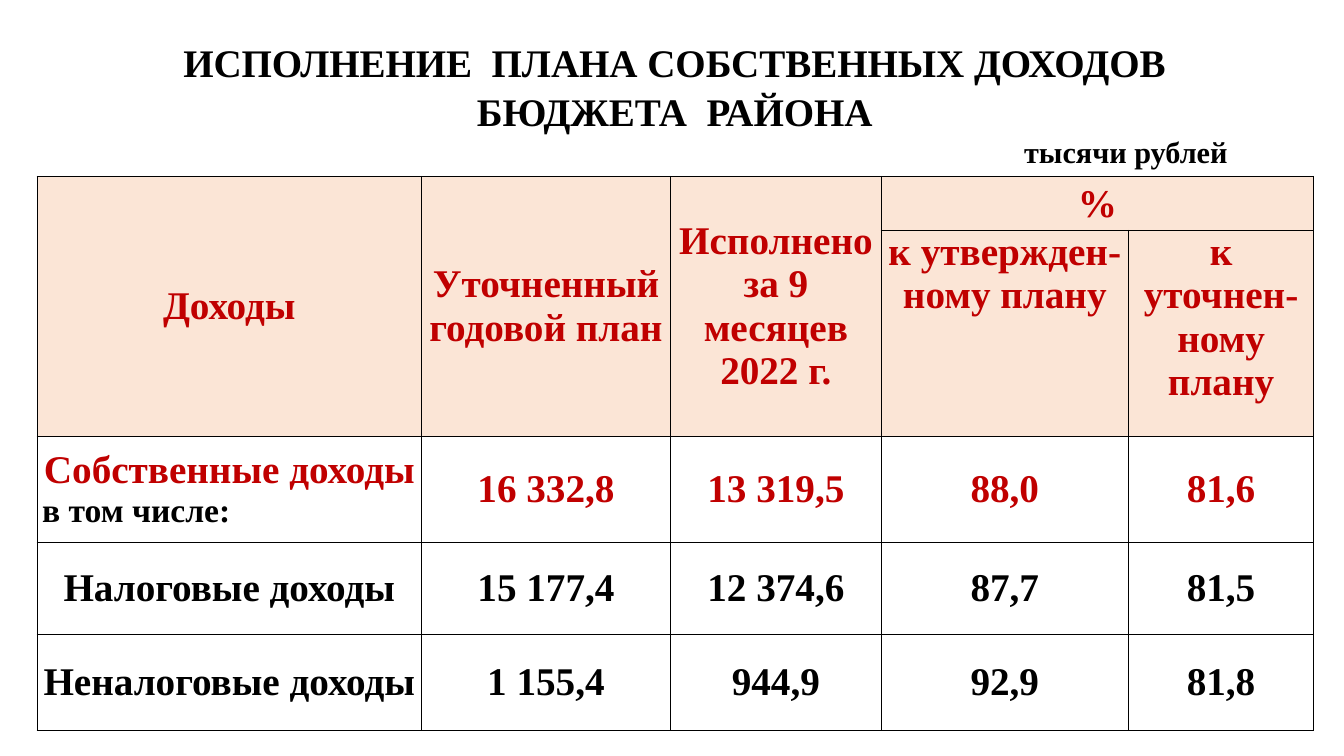
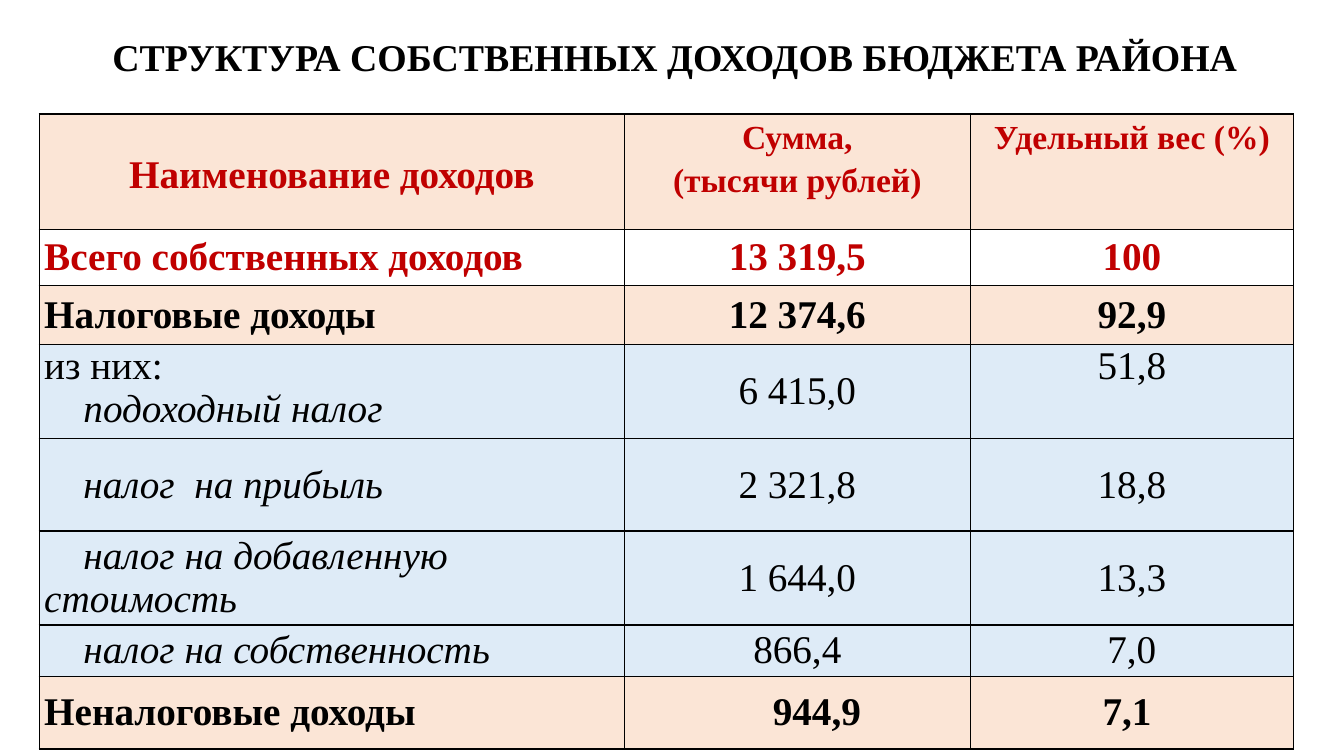
from dataclasses import dataclass, replace

from lxml import etree
from pptx import Presentation
from pptx.dml.color import RGBColor
from pptx.enum.text import MSO_ANCHOR, PP_ALIGN
from pptx.oxml.ns import qn
from pptx.util import Pt

LEFT, CENTER, RIGHT = PP_ALIGN.LEFT, PP_ALIGN.CENTER, PP_ALIGN.RIGHT
TOP, MIDDLE = MSO_ANCHOR.TOP, MSO_ANCHOR.MIDDLE


@dataclass(frozen=True)
class Theme:
    font: str = "Times New Roman"
    black: str = "000000"
    red: str = "C00000"
    white: str = "FFFFFF"
    peach: str = "FBE5D6"
    blue: str = "DEEBF7"
    title: float = 27.9
    title_single: float = 27
    units: float = 21.6
    body: float = 28
    small: float = 24
    indent: float = 28
    inset: float = 3.6
    border: float = 1


T = Theme()


@dataclass(frozen=True)
class Style:
    size: float = T.body
    color: str = T.black
    bold: bool = True
    italic: bool = False
    align: int = CENTER
    spacing: float = 1.0
    first: float = 0
    margin: float = 0


@dataclass(frozen=True)
class Cell:
    lines: tuple
    fill: str = T.white
    anchor: int = MIDDLE


HEAD = Style(color=T.red)
HEAD_WIDE = replace(HEAD, spacing=1.15)
HEAD_SMALL = replace(HEAD_WIDE, size=T.small)
TOTAL = HEAD
STRONG = Style()
PLAIN = Style(bold=False)
ITEM = replace(PLAIN, italic=True, align=LEFT, first=T.indent)


def cell(text, style, fill=T.white, anchor=MIDDLE):
    return Cell(tuple((t, style) for t in text.split("\n")), fill, anchor)


def row(style, fill, label, *values):
    return [cell(label, replace(style, align=LEFT), fill)] + [
        cell(v, style, fill) for v in values]


def item_row(label, *values):
    return [cell(label, ITEM, T.blue)] + [cell(v, PLAIN, T.blue) for v in values]


def write(tf, lines):
    for i, (text, style) in enumerate(lines):
        p = tf.paragraphs[0] if i == 0 else tf.add_paragraph()
        p.add_run().text = text
        p.alignment = style.align
        p.line_spacing = style.spacing
        f = p.font
        f.name, f.size = T.font, Pt(style.size)
        f.bold, f.italic = style.bold, style.italic
        f.color.rgb = RGBColor.from_string(style.color)
        if style.first or style.margin:
            pPr = p._p.get_or_add_pPr()
            pPr.set("marL", str(Pt(style.margin)))
            pPr.set("indent", str(Pt(style.first)))


def add_text(s, box, text, style):
    tf = s.shapes.add_textbox(*map(Pt, box)).text_frame
    tf.word_wrap = True
    tf.vertical_anchor = MIDDLE
    write(tf, [(text, style)])


def add_borders(c):
    tcPr = c._tc.get_or_add_tcPr()
    for i, side in enumerate(("a:lnL", "a:lnR", "a:lnT", "a:lnB")):
        ln = etree.Element(qn(side), w=str(Pt(T.border)))
        fill = etree.SubElement(ln, qn("a:solidFill"))
        etree.SubElement(fill, qn("a:srgbClr"), val=T.black)
        tcPr.insert(i, ln)


def add_grid(s, left, top, widths, heights, rows, merges=()):
    box = (left, top, sum(widths), sum(heights))
    table = s.shapes.add_table(len(heights), len(widths), *map(Pt, box)).table
    table.first_row = table.horz_banding = False
    for column, width in zip(table.columns, widths):
        column.width = Pt(width)
    for r, (table_row, height, cells) in enumerate(zip(table.rows, heights, rows)):
        table_row.height = Pt(height)
        for c, item in enumerate(cells):
            tc = table.cell(r, c)
            tc.margin_left = tc.margin_right = Pt(T.inset)
            tc.margin_top = tc.margin_bottom = 0
            tc.fill.solid()
            tc.fill.fore_color.rgb = RGBColor.from_string(item.fill if item else T.peach)
            add_borders(tc)
            if item:
                tc.vertical_anchor = item.anchor
                write(tc.text_frame, item.lines)
    for (r1, c1), (r2, c2) in merges:
        table.cell(r1, c1).merge(table.cell(r2, c2))


def plan_slide(s):
    add_text(s, (68, 27, 828, 68),
             "ИСПОЛНЕНИЕ  ПЛАНА СОБСТВЕННЫХ ДОХОДОВ БЮДЖЕТА  РАЙОНА",
             Style(size=T.title, spacing=1.05))
    add_text(s, (684, 91, 200, 34), "тысячи рублей", Style(size=T.units, align=RIGHT))
    top_head = [cell(t, HEAD, T.peach) for t in (
        "Доходы", "Уточненный годовой план", "Исполнено за 9 месяцев 2022 г.")]
    own_income = Cell((("Собственные доходы", TOTAL),
                       ("в том числе:", Style(size=T.small, align=LEFT))))
    rows = [
        top_head + [cell("%", HEAD_WIDE, T.peach, TOP), None],
        [None] * 3 + [cell(t, HEAD, T.peach, TOP) for t in (
            "к утвержден-\nному плану", "к уточнен-ному плану")],
        [own_income] + [cell(t, TOTAL) for t in ("16 332,8", "13 319,5", "88,0", "81,6")],
        [cell(t, STRONG) for t in (
            "Налоговые доходы", "15 177,4", "12 374,6", "87,7", "81,5")],
        [cell(t, STRONG) for t in (
            "Неналоговые доходы", "1 155,4", "944,9", "92,9", "81,8")],
    ]
    merges = [((0, c), (1, c)) for c in range(3)] + [((0, 3), (0, 4))]
    add_grid(s, 26.5, 126, (274.5, 178, 150.5, 176.5, 132.5),
             (36.7, 147, 75.7, 66, 68.5), rows, merges)


def structure_slide(s):
    add_text(s, (68, 16, 828, 49), "СТРУКТУРА СОБСТВЕННЫХ ДОХОДОВ БЮДЖЕТА РАЙОНА",
             Style(size=T.title_single))
    income_tax = Cell((("из них:", replace(PLAIN, align=LEFT)),
                       ("подоходный налог", ITEM)), T.blue, TOP)
    rows = [
        [cell("Наименование доходов", HEAD_WIDE, T.peach),
         cell("Сумма,\n(тысячи рублей)", HEAD_SMALL, T.peach, TOP),
         cell("Удельный вес (%)", HEAD_SMALL, T.peach, TOP)],
        row(TOTAL, T.white, "Всего собственных доходов", "13 319,5", "100"),
        row(STRONG, T.peach, "Налоговые доходы", "12 374,6", "92,9"),
        [income_tax, cell("6 415,0", PLAIN, T.blue), cell("51,8", PLAIN, T.blue, TOP)],
        item_row("налог  на прибыль", "2 321,8", "18,8"),
        item_row("налог на добавленную стоимость", "1 644,0", "13,3"),
        item_row("налог на собственность", "866,4", "7,0"),
        [cell("Неналоговые доходы", replace(STRONG, align=LEFT), T.peach),
         cell("944,9", replace(STRONG, margin=T.indent), T.peach),
         cell("7,1 ", STRONG, T.peach)],
    ]
    add_grid(s, 28, 81.5, (418, 247, 231),
             (82.5, 40, 42, 66, 66, 66, 36.5, 52), rows)


def main():
    prs = Presentation()
    prs.slide_width, prs.slide_height = Pt(960), Pt(540)
    for build in (plan_slide, structure_slide):
        build(prs.slides.add_slide(prs.slide_layouts[6]))
    prs.save("out.pptx")


if __name__ == "__main__":
    main()
